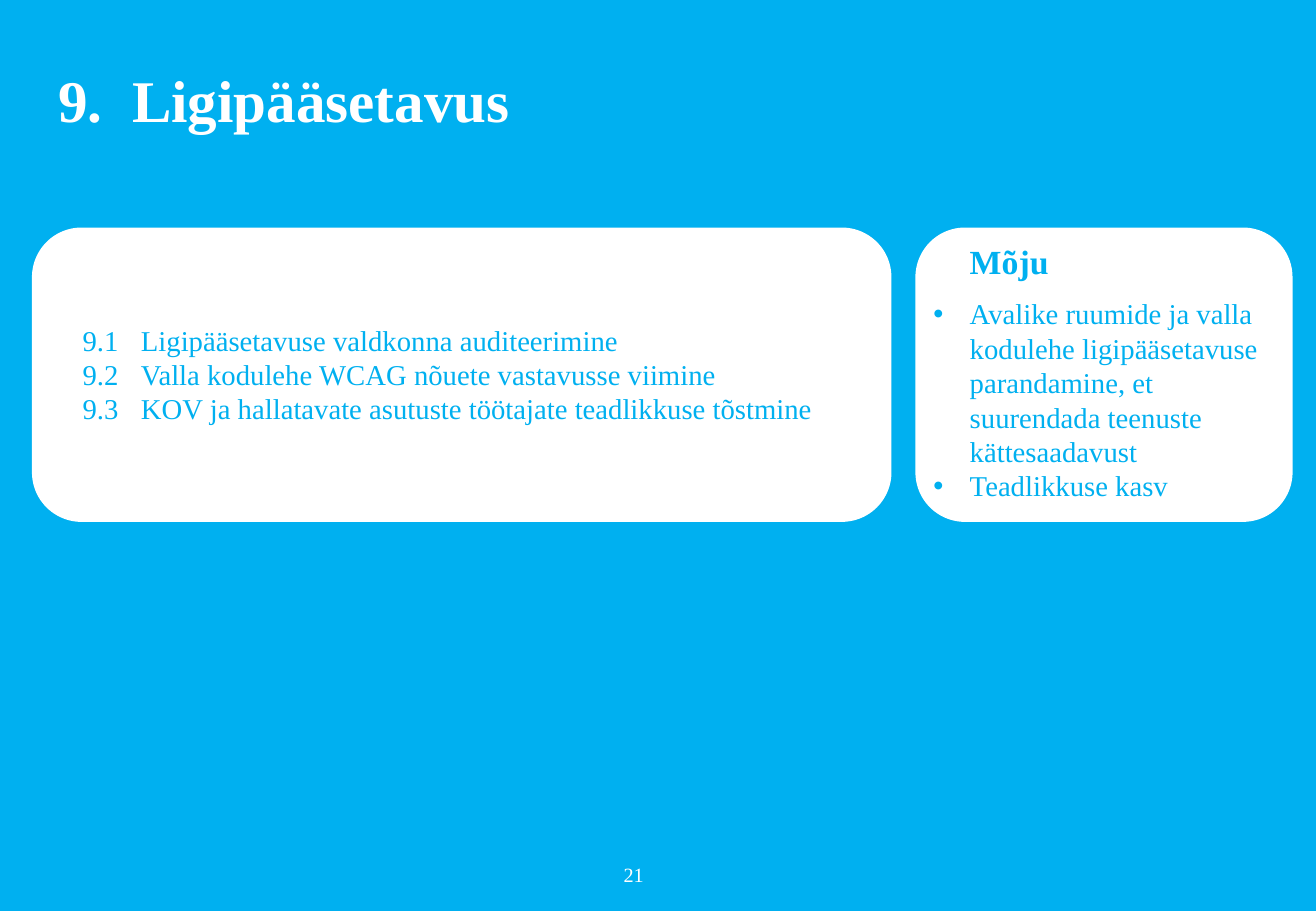
"""Build the accessibility slide with its actions and their impact."""
from lxml.etree import SubElement
from pptx import Presentation
from pptx.dml.color import RGBColor
from pptx.enum.shapes import MSO_SHAPE
from pptx.enum.text import MSO_ANCHOR, PP_ALIGN
from pptx.oxml.ns import qn
from pptx.util import Inches, Pt

TITLE = "9.  Ligipääsetavus"
ACTIONS = [
    "9.1\tLigipääsetavuse valdkonna auditeerimine",
    "9.2\tValla kodulehe WCAG nõuete vastavusse viimine",
    "9.3\tKOV ja hallatavate asutuste töötajate teadlikkuse tõstmine",
]
IMPACT_HEADING = "Mõju"
IMPACTS = [
    "Avalike ruumide ja valla kodulehe ligipääsetavuse parandamine, "
    "et suurendada teenuste kättesaadavust",
    "Teadlikkuse kasv",
]
PAGE_NUMBER = "21"

FONT = "Times New Roman"
BLUE = RGBColor(0x00, 0xB0, 0xF0)
WHITE = RGBColor(0xFF, 0xFF, 0xFF)
CARD_TOP, CARD_HEIGHT = 1.88, 2.41
CARDS = [(0.27, 7.06), (7.54, 3.09)]


def add_card(slide, left, width):
    shape = slide.shapes.add_shape(
        MSO_SHAPE.ROUNDED_RECTANGLE,
        Inches(left), Inches(CARD_TOP), Inches(width), Inches(CARD_HEIGHT),
    )
    shape.shadow.inherit = False
    shape.fill.solid()
    shape.fill.fore_color.rgb = WHITE
    shape.line.color.rgb = WHITE
    shape.line.width = Pt(1)


def add_frame(slide, left, top, width, height, anchor=MSO_ANCHOR.MIDDLE, wrap=True):
    frame = slide.shapes.add_textbox(
        Inches(left), Inches(top), Inches(width), Inches(height)
    ).text_frame
    frame.word_wrap = wrap
    frame.vertical_anchor = anchor
    frame.margin_left = frame.margin_right = Inches(0.05)
    frame.margin_top = frame.margin_bottom = Inches(0.05)
    return frame


def write(frame, text, size=17, color=BLUE, bold=False, align=PP_ALIGN.LEFT,
          indent=0, hanging=0, bullet=None, space_after=0, line_spacing=1.0):
    first = frame.paragraphs[0]
    paragraph = frame.add_paragraph() if first.runs else first
    paragraph.alignment = align
    paragraph.space_after = Pt(space_after)
    paragraph.line_spacing = line_spacing
    run = paragraph.add_run()
    run.text = text
    run.font.name = FONT
    run.font.size = Pt(size)
    run.font.bold = bold
    run.font.color.rgb = color
    properties = paragraph._p.get_or_add_pPr()
    properties.set("marL", str(Inches(indent)))
    properties.set("indent", str(-Inches(hanging)))
    if bullet:
        SubElement(properties, qn("a:buFont"), typeface="Arial")
        SubElement(properties, qn("a:buChar"), char=bullet)


def main():
    presentation = Presentation()
    presentation.slide_width = Inches(10.83)
    presentation.slide_height = Inches(7.5)
    slide = presentation.slides.add_slide(presentation.slide_layouts[6])
    slide.background.fill.solid()
    slide.background.fill.fore_color.rgb = BLUE

    for left, width in CARDS:
        add_card(slide, left, width)

    title = add_frame(slide, 0.43, 0.55, 9.85, 0.6)
    write(title, TITLE, size=35, color=WHITE, bold=True, line_spacing=0.9)

    actions = add_frame(slide, 0.63, 2.6, 6.32, 0.96)
    for action in ACTIONS:
        write(actions, action, align=PP_ALIGN.JUSTIFY, indent=0.48, hanging=0.48)

    impact = add_frame(slide, 7.54, 1.93, 3.11, 2.3, anchor=MSO_ANCHOR.TOP)
    write(impact, IMPACT_HEADING, size=20, bold=True, indent=0.39, space_after=9)
    for item in IMPACTS:
        write(impact, item, indent=0.39, hanging=0.3, bullet="•")

    number = add_frame(slide, 5.08, 7.05, 0.27, 0.3, wrap=False)
    write(number, PAGE_NUMBER, size=12, color=WHITE, align=PP_ALIGN.CENTER)

    presentation.save("out.pptx")


if __name__ == "__main__":
    main()
